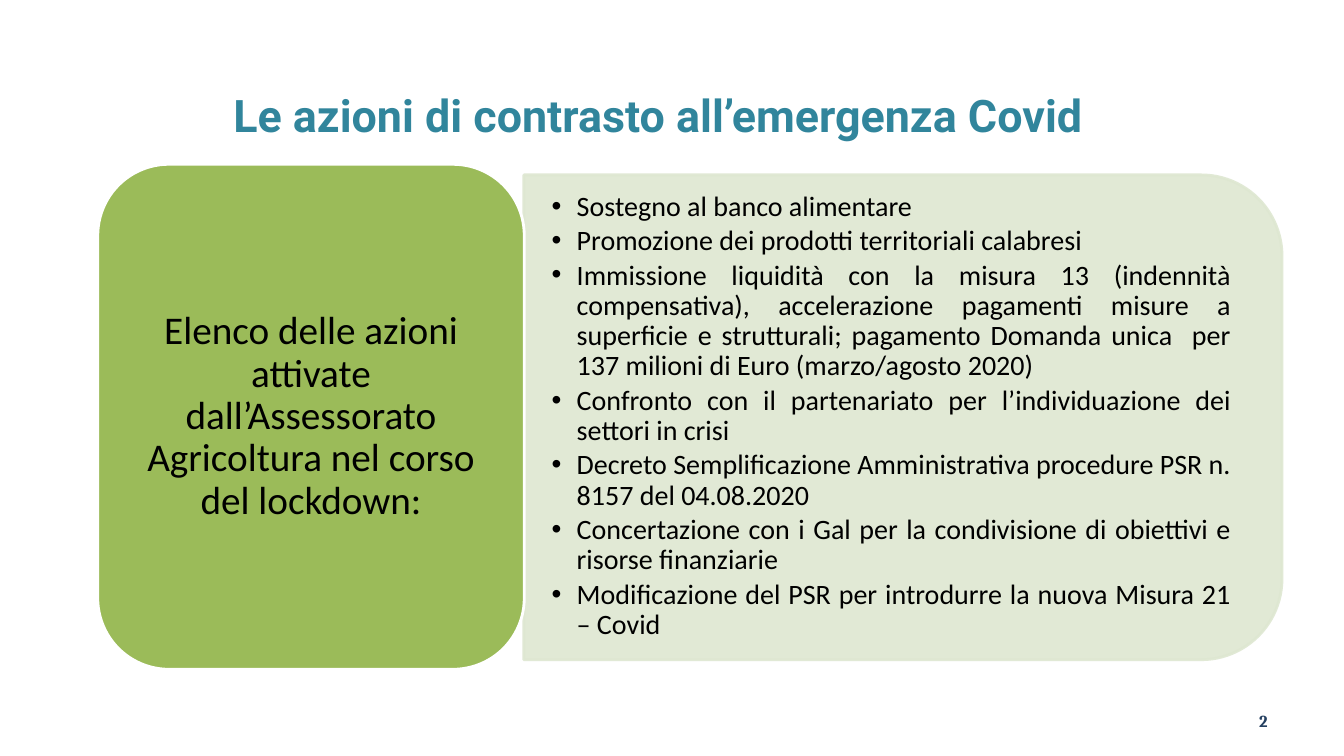
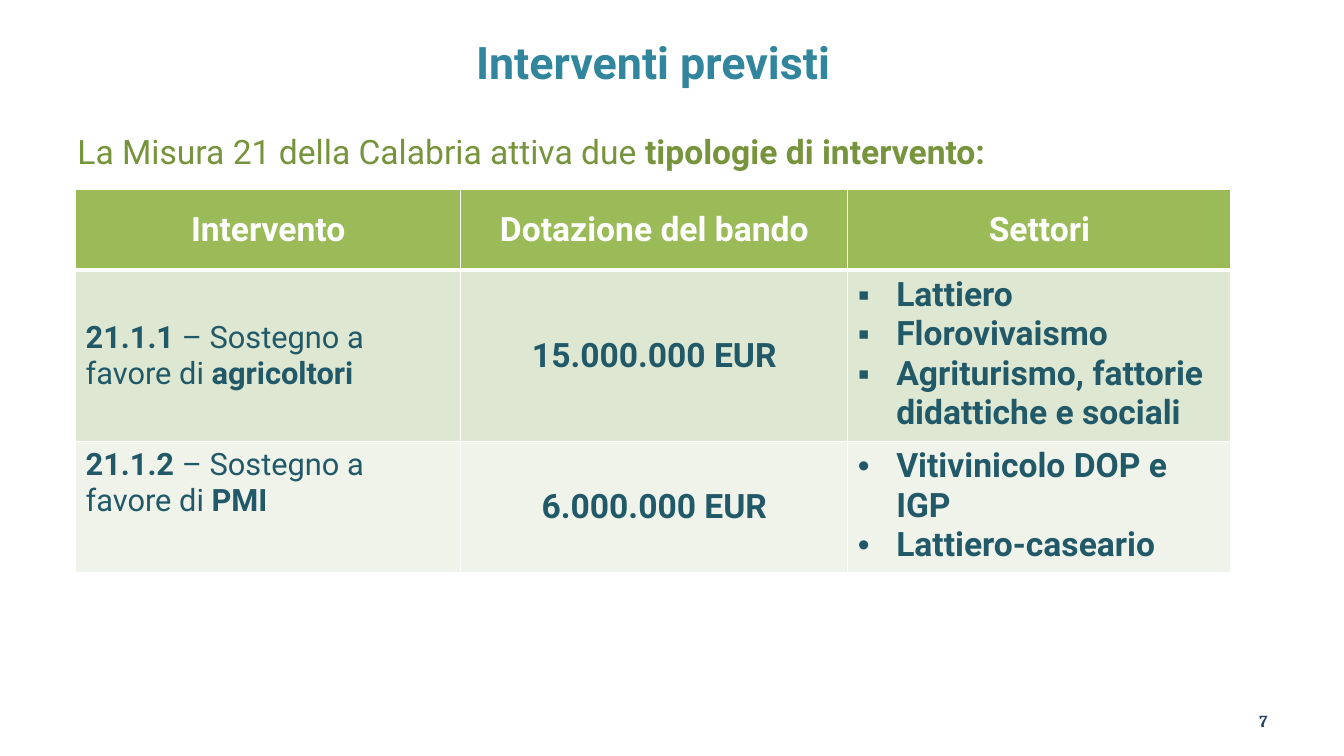
from lxml import etree
from pptx import Presentation
from pptx.dml.color import RGBColor
from pptx.enum.shapes import MSO_SHAPE
from pptx.enum.text import MSO_ANCHOR, PP_ALIGN
from pptx.oxml.ns import qn
from pptx.util import Inches, Pt

ROUNDED, TAB_PANEL = MSO_SHAPE.ROUNDED_RECTANGLE, MSO_SHAPE.ROUND_2_SAME_RECTANGLE
TOP, MIDDLE = MSO_ANCHOR.TOP, MSO_ANCHOR.MIDDLE
LEFT, CENTER, RIGHT, JUSTIFY = PP_ALIGN.LEFT, PP_ALIGN.CENTER, PP_ALIGN.RIGHT, PP_ALIGN.JUSTIFY

COLORS = {
    "title": "31859C", "number": "254061", "intro": "77933C", "cell": "215968",
    "green": "9BBB59", "pale": "DEE7D1", "paler": "EFF3EA",
    "white": "FFFFFF", "black": "000000",
}


def rgb(name):
    return RGBColor.from_string(COLORS[name])


class Deck:
    """Shared style and the slide being built."""

    def __init__(self):
        self.prs = Presentation()
        self.prs.slide_width, self.prs.slide_height = Inches(13.33), Inches(7.5)
        self.slide = None

    def new_slide(self, title, left, top, number):
        self.slide = self.prs.slides.add_slide(self.prs.slide_layouts[6])
        self.text(left, top, 12, 0.64, [title], MIDDLE, size=32, color="title",
                  bold=True, align=CENTER)
        self.text(9.56, 6.95, 3.11, 0.4, [number], MIDDLE, size=12, color="number",
                  bold=True, align=RIGHT, font="Cambria")

    def fill_frame(self, frame, paragraphs, size, color, font="Roboto", bold=False,
                   align=LEFT, bullet=None, indent=0.38, line=None, after=None):
        """Each paragraph is a string or a list of (text, bold) pairs."""
        for i, content in enumerate(paragraphs):
            p = frame.paragraphs[0] if i == 0 else frame.add_paragraph()
            p.alignment = align
            if line:
                p.line_spacing = line
            if after:
                p.space_after = Pt(after)
            if bullet:
                props = p._p.get_or_add_pPr()
                props.set("marL", str(Inches(indent)))
                props.set("indent", str(-Inches(indent)))
                etree.SubElement(props, qn("a:buFont"), typeface="Arial")
                etree.SubElement(props, qn("a:buChar"), char=bullet)
            p.font.name, p.font.size = font, Pt(size)
            p.font.color.rgb = rgb(color)
            if isinstance(content, str):
                p.font.bold = bold
                p.add_run().text = content
                continue
            for words, strong in content:
                run = p.add_run()
                run.text = words
                run.font.bold = strong

    def set_frame(self, frame, anchor, margins):
        frame.word_wrap = True
        frame.vertical_anchor = anchor
        frame.margin_left = frame.margin_right = Inches(margins[0])
        frame.margin_top = frame.margin_bottom = Inches(margins[1])

    def text(self, left, top, width, height, paragraphs, anchor=TOP,
             margins=(0.1, 0.05), **style):
        box = self.slide.shapes.add_textbox(
            Inches(left), Inches(top), Inches(width), Inches(height))
        self.set_frame(box.text_frame, anchor, margins)
        self.fill_frame(box.text_frame, paragraphs, **style)

    def shape(self, kind, left, top, width, height, fill, line, alpha=None):
        shape = self.slide.shapes.add_shape(
            kind, Inches(left), Inches(top), Inches(width), Inches(height))
        shape.shadow.inherit = False
        shape.fill.solid()
        shape.fill.fore_color.rgb = rgb(fill)
        shape.line.color.rgb = rgb(line)
        shape.line.width = Pt(2)
        if alpha:
            for color in shape._element.spPr.iter(qn("a:srgbClr")):
                etree.SubElement(color, qn("a:alpha"), val=str(alpha * 1000))
        return shape

    def table(self, left, top, widths, heights):
        table = self.slide.shapes.add_table(
            len(heights), len(widths), Inches(left), Inches(top),
            Inches(sum(widths)), Inches(sum(heights))).table
        for column, width in zip(table.columns, widths):
            column.width = Inches(width)
        for row, height in zip(table.rows, heights):
            row.height = Inches(height)
        return table

    def cell(self, cell, paragraphs, fill, anchor=MIDDLE, top=1, bottom=1, **style):
        cell.vertical_anchor = anchor
        props = cell._tc.get_or_add_tcPr()
        for side, width in (("L", 1), ("R", 1), ("T", top), ("B", bottom)):
            edge = etree.SubElement(props, qn(f"a:ln{side}"), w=str(Pt(width)))
            solid = etree.SubElement(edge, qn("a:solidFill"))
            etree.SubElement(solid, qn("a:srgbClr"), val=COLORS["white"])
        cell.fill.solid()
        cell.fill.fore_color.rgb = rgb(fill)
        self.fill_frame(cell.text_frame, paragraphs, **style)


def build_actions(deck):
    deck.new_slide("Le azioni di contrasto all’emergenza Covid", 0.53, 0.82, "2")

    # Panel with the list of actions
    panel = deck.shape(TAB_PANEL, 6.55, 0.38, 4.81, 7.52, "pale", "pale", alpha=90)
    panel.rotation = 90
    actions = [
        "Sostegno al banco alimentare",
        "Promozione dei prodotti territoriali calabresi",
        "Immissione liquidità con la misura 13 (indennità compensativa), accelerazione "
        "pagamenti misure a superficie e strutturali; pagamento Domanda unica  per "
        "137 milioni di Euro (marzo/agosto 2020)",
        "Confronto con il partenariato per l’individuazione dei settori in crisi",
        "Decreto Semplificazione Amministrativa procedure PSR n. 8157 del 04.08.2020",
        "Concertazione con i Gal per la condivisione di obiettivi e risorse finanziarie",
        "Modificazione del PSR per introdurre la nuova Misura 21 – Covid",
    ]
    deck.text(5.2, 1.96, 7.28, 4.34, actions, MIDDLE, (0.27, 0.14), size=20,
              color="black", font="Calibri", align=JUSTIFY, bullet="•",
              indent=0.25, line=0.9, after=3)

    # Heading block on the left
    heading = deck.shape(ROUNDED, 0.97, 1.63, 4.23, 5.01, "green", "white")
    deck.set_frame(heading.text_frame, MIDDLE, (0.12, 0.06))
    deck.fill_frame(
        heading.text_frame,
        ["Elenco delle azioni attivate dall’Assessorato Agricoltura nel corso del lockdown:"],
        size=28, color="black", font="Calibri", align=CENTER, line=0.9)


def build_interventions(deck):
    deck.new_slide("Interventi previsti", 0.48, 0.29, "7")
    deck.text(0.67, 1.25, 12, 0.55,
              [[("La Misura 21 della Calabria attiva due", False),
                (" tipologie di intervento:", True)]], size=24, color="intro")

    # Interventions table
    table = deck.table(0.75, 1.88, [3.82, 3.84, 3.8], [0.8, 1.66, 1.28])
    for col, label in enumerate(["Intervento", "Dotazione del bando", "Settori"]):
        deck.cell(table.cell(0, col), [label], "green", bottom=3, size=24,
                  color="white", bold=True, align=CENTER)

    interventions = [
        ("21.1.1", "agricoltori", "15.000.000 EUR", "▪",
         ["Lattiero", "Florovivaismo", "Agriturismo, fattorie didattiche e sociali"],
         "pale", MIDDLE, 3),
        ("21.1.2", "PMI", "6.000.000 EUR", "•",
         ["Vitivinicolo DOP e IGP", "Lattiero-caseario"], "paler", TOP, 1),
    ]
    for row, (code, target, budget, bullet, sectors, fill, anchor, top) in enumerate(
            interventions, start=1):
        support = [(code, True), (" – Sostegno a favore di ", False), (target, True)]
        deck.cell(table.cell(row, 0), [support], fill, anchor, top,
                  size=22, color="cell")
        deck.cell(table.cell(row, 1), [budget], fill, MIDDLE, top,
                  size=24, color="cell", bold=True, align=CENTER)
        deck.cell(table.cell(row, 2), sectors, fill, TOP, top,
                  size=24, color="cell", bold=True, bullet=bullet)


def main():
    deck = Deck()
    build_actions(deck)
    build_interventions(deck)
    deck.prs.save("out.pptx")


if __name__ == "__main__":
    main()
